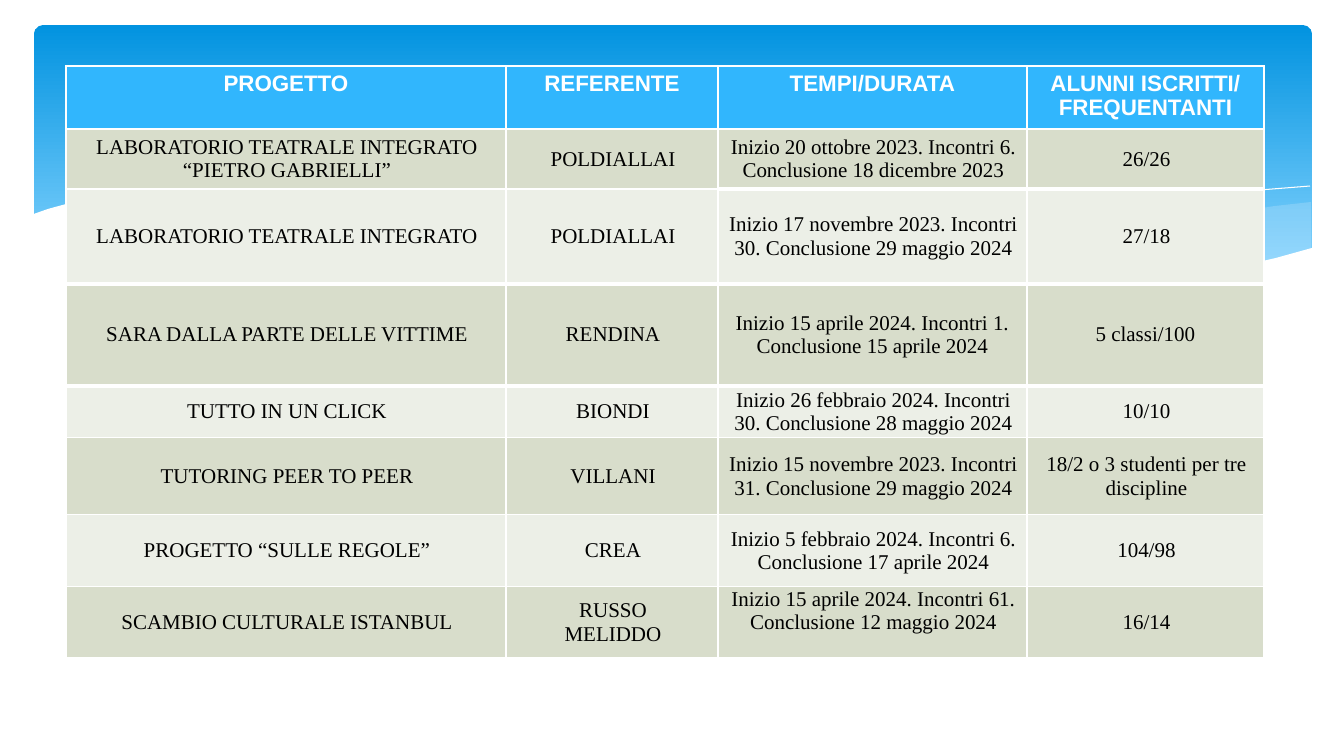
from dataclasses import dataclass
from typing import Optional

from lxml import etree
from pptx import Presentation
from pptx import util as u
from pptx.dml.color import RGBColor
from pptx.enum import shapes, text
from pptx.oxml.ns import qn

EMU_PER_PX = 12192000 / 1344
WHITE, BLACK = "FFFFFF", "000000"
HEADER_FILL, BAND_FILLS = "31B6FD", ("D8DDCB", "ECEFE7")
WAVE = "C6E7FC"


def px(length: int) -> u.Emu:
    return u.Emu(round(length * EMU_PER_PX))


def color(hex_string: str) -> RGBColor:
    return RGBColor.from_string(hex_string)


@dataclass
class Curve:
    points: list[tuple[int, int]]
    fill: Optional[str] = None
    opacity: int = 100


@dataclass
class Style:
    font: dict
    color: str
    anchor: text.MSO_ANCHOR
    margins: tuple[int, int, int, int]


HEADER = Style({"name": "Arial", "size": u.Pt(16), "bold": True}, WHITE,
               text.MSO_ANCHOR.TOP, (10, 5, 10, 5))
BODY_FONT = {"name": "Times New Roman", "size": u.Pt(15), "bold": False}
BODY = Style(BODY_FONT, BLACK, text.MSO_ANCHOR.MIDDLE, (4, 1, 2, 1))
BODY_WIDE = Style(BODY_FONT, BLACK, text.MSO_ANCHOR.MIDDLE, (10, 5, 10, 5))
BODY_TOP = Style(BODY_FONT, BLACK, text.MSO_ANCHOR.TOP, (4, 1, 2, 1))

CURVES = [
    # Right wave
    Curve([(1311, 202), (1275, 206), (1237, 212), (1198, 218), (1156, 225), (1082, 239),
           (1013, 250), (949, 259), (889, 267), (948, 273), (1017, 278), (1080, 280),
           (1135, 279), (1183, 275), (1228, 269), (1267, 261), (1311, 249)], WAVE, 29),
    # Middle wave
    Curve([(1200, 275), (1125, 267), (1042, 256), (949, 242), (846, 224), (784, 213),
           (746, 207), (691, 200), (624, 193), (564, 188), (486, 186), (440, 188),
           (385, 193), (460, 201), (543, 213), (604, 224), (712, 242), (808, 257),
           (894, 268), (971, 276), (1054, 280), (1127, 280)], WAVE, 40),
    # Hairlines
    Curve([(415, 197), (462, 192), (520, 188), (582, 188), (657, 192), (748, 199),
           (817, 206), (893, 215), (978, 228), (1068, 243), (1167, 263), (1220, 274)]),
    Curve([(825, 259), (903, 243), (1005, 225), (1084, 212), (1164, 201), (1223, 194),
           (1260, 190), (1310, 186)]),
    # White lower edge of the banner
    Curve([(1312, 248), (1276, 258), (1237, 267), (1192, 273), (1143, 277), (1087, 279),
           (1023, 277), (952, 272), (870, 264), (778, 252), (676, 235), (601, 222),
           (525, 209), (457, 199), (393, 192), (336, 187), (260, 185), (196, 186),
           (143, 191), (102, 197), (70, 203), (48, 209), (31, 215), (31, 332),
           (1313, 332)], WHITE),
]

COLUMN_WIDTHS = [440, 212, 309, 237]
ROW_HEIGHTS = [63, 60, 95, 102, 52, 77, 72, 71]
ROWS = [
    ("PROGETTO", "REFERENTE", "TEMPI/DURATA", "ALUNNI ISCRITTI/\nFREQUENTANTI"),
    ("LABORATORIO TEATRALE INTEGRATO “PIETRO GABRIELLI”", "POLDIALLAI",
     "Inizio 20 ottobre 2023. Incontri 6. Conclusione 18 dicembre 2023", "26/26"),
    ("LABORATORIO TEATRALE INTEGRATO", "POLDIALLAI",
     "Inizio 17 novembre 2023. Incontri 30. Conclusione 29 maggio 2024", "27/18"),
    ("SARA DALLA PARTE DELLE VITTIME", "RENDINA",
     "Inizio 15 aprile 2024. Incontri 1. Conclusione 15 aprile 2024", "5 classi/100"),
    ("TUTTO IN UN CLICK", "BIONDI",
     "Inizio 26 febbraio 2024. Incontri 30. Conclusione 28 maggio 2024", "10/10"),
    ("TUTORING PEER TO PEER", "VILLANI",
     "Inizio 15 novembre 2023. Incontri 31. Conclusione 29 maggio 2024",
     "18/2 o 3 studenti per tre discipline"),
    ("PROGETTO “SULLE REGOLE”", "CREA",
     "Inizio 5 febbraio 2024. Incontri 6. Conclusione 17 aprile 2024", "104/98"),
    ("SCAMBIO CULTURALE ISTANBUL", "RUSSO\nMELIDDO",
     "Inizio 15 aprile 2024. Incontri 61. Conclusione 12 maggio 2024", "16/14"),
]
SPECIAL_STYLES = {(3, 2): BODY_WIDE, (3, 3): BODY_WIDE, (7, 2): BODY_TOP}
# Cells with a thick rule below them
THICK_BELOW = {(1, 2), (1, 3)} | {(row, column) for row in (2, 3) for column in range(4)}


def draw_banner(slide) -> None:
    banner = slide.shapes.add_shape(shapes.MSO_SHAPE.ROUNDED_RECTANGLE,
                                    px(34), px(25), px(1278), px(272))
    banner.adjustments[0] = 0.034
    banner.shadow.inherit = False
    banner.line.fill.background()
    banner.fill.gradient()
    banner.fill.gradient_angle = 270
    for stop, (position, shade) in zip(banner.fill.gradient_stops,
                                       [(0, "0293E0"), (0.9, "83D3FE")]):
        stop.position = position
        stop.color.rgb = color(shade)


def draw_curve(slide, curve: Curve) -> None:
    start, *rest = [(px(x), px(y)) for x, y in curve.points]
    builder = slide.shapes.build_freeform(*start)
    builder.add_line_segments(rest, close=curve.fill is not None)
    shape = builder.convert_to_shape()
    shape.shadow.inherit = False
    if curve.fill is None:
        shape.fill.background()
        shape.line.color.rgb = color(WHITE)
        shape.line.width = u.Pt(0)
        return
    shape.line.fill.background()
    shape.fill.solid()
    shape.fill.fore_color.rgb = color(curve.fill)
    if curve.opacity < 100:
        fill_color = shape.fill._xPr.find(".//" + qn("a:srgbClr"))
        etree.SubElement(fill_color, qn("a:alpha"), val=str(curve.opacity * 1000))


def set_borders(cell, top: int, bottom: int) -> None:
    properties = cell._tc.get_or_add_tcPr()
    for side, points in {"L": 1, "R": 1, "T": top, "B": bottom}.items():
        line = etree.SubElement(properties, qn(f"a:ln{side}"), w=str(u.Pt(points)))
        solid = etree.SubElement(line, qn("a:solidFill"))
        etree.SubElement(solid, qn("a:srgbClr"), val=WHITE)


def fill_cell(cell, words: str, style: Style, background: str) -> None:
    cell.fill.solid()
    cell.fill.fore_color.rgb = color(background)
    cell.vertical_anchor = style.anchor
    for side, margin in zip(("left", "top", "right", "bottom"), style.margins):
        setattr(cell, f"margin_{side}", px(margin))
    cell.text_frame.text = words
    for paragraph in cell.text_frame.paragraphs:
        paragraph.alignment = text.PP_ALIGN.CENTER
        for run in paragraph.runs:
            for attribute, value in style.font.items():
                setattr(run.font, attribute, value)
            run.font.color.rgb = color(style.color)


def draw_table(slide) -> None:
    table = slide.shapes.add_table(len(ROWS), len(COLUMN_WIDTHS), px(66), px(66),
                                   px(sum(COLUMN_WIDTHS)), px(sum(ROW_HEIGHTS))).table
    for column, width in zip(table.columns, COLUMN_WIDTHS):
        column.width = px(width)
    for row, height in zip(table.rows, ROW_HEIGHTS):
        row.height = px(height)
    for r, values in enumerate(ROWS):
        for c, words in enumerate(values):
            cell = table.cell(r, c)
            set_borders(cell, top=3 if (r - 1, c) in THICK_BELOW else 1,
                        bottom=3 if (r, c) in THICK_BELOW else 1)
            style = SPECIAL_STYLES.get((r, c), BODY) if r else HEADER
            fill_cell(cell, words, style, BAND_FILLS[(r - 1) % 2] if r else HEADER_FILL)


def main() -> None:
    presentation = Presentation()
    presentation.slide_width, presentation.slide_height = px(1344), px(756)
    slide = presentation.slides.add_slide(presentation.slide_layouts[6])
    draw_banner(slide)
    for curve in CURVES:
        draw_curve(slide, curve)
    draw_table(slide)
    presentation.save("out.pptx")


if __name__ == "__main__":
    main()
